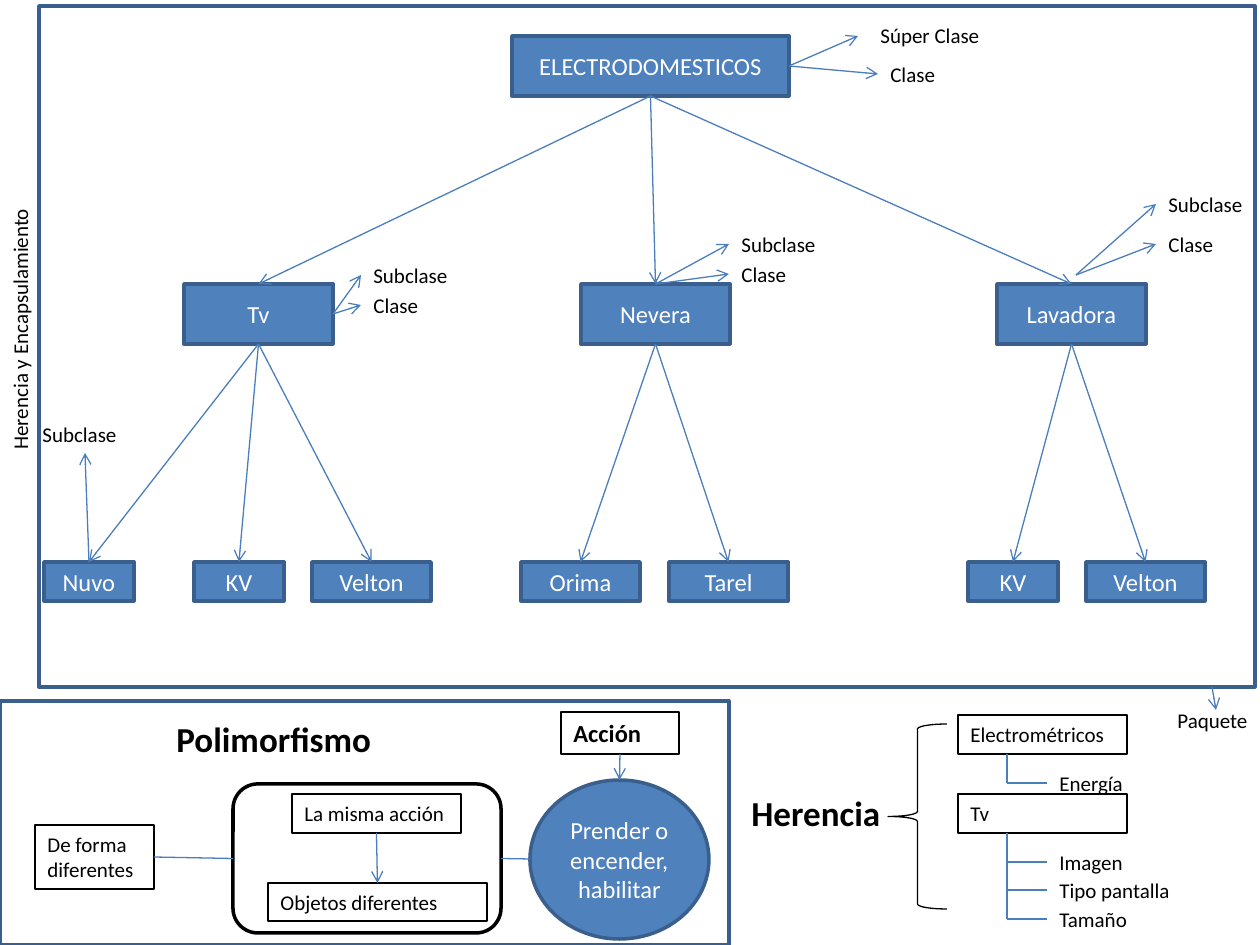
from lxml import etree
from pptx import Presentation
from pptx import util as u
from pptx.dml.color import RGBColor
from pptx.enum import shapes, text
from pptx.oxml import ns

PX = 914400 / 126
TOP, LEFT, BOTTOM, RIGHT = range(4)
KIND = shapes.MSO_SHAPE


def emu(px):
    return u.Emu(round(px * PX))


def color(value):
    return RGBColor.from_string(value)


class Sketch:
    font = "Calibri"
    ink, paper = "000000", "FFFFFF"
    blue, edge, wire = "4F81BD", "3A5F8C", "4B7EBC"

    def __init__(self, page):
        self.page = page

    def letter(self, shape, words, size, ink, bold=False, centred=False):
        frame = shape.text_frame
        frame.word_wrap = True
        frame.vertical_anchor = text.MSO_ANCHOR.MIDDLE if centred else text.MSO_ANCHOR.TOP
        para = frame.paragraphs[0]
        para.alignment = text.PP_ALIGN.CENTER if centred else text.PP_ALIGN.LEFT
        span = para.add_run()
        span.text = words
        span.font.name = self.font
        span.font.size = u.Pt(size)
        span.font.bold = bold
        span.font.color.rgb = color(ink)

    def shape(self, kind, at, fill, line, weight):
        shape = self.page.shapes.add_shape(kind, *map(emu, at))
        shape.shadow.inherit = False
        if fill:
            shape.fill.solid()
            shape.fill.fore_color.rgb = color(fill)
        else:
            shape.fill.background()
        shape.line.color.rgb = color(line)
        shape.line.width = u.Pt(weight)
        return shape

    def panel(self, kind, at, line):
        return self.shape(kind, at, self.paper, line, 2)

    def node(self, words, at, kind=KIND.RECTANGLE):
        box = self.shape(kind, at, self.blue, self.edge, 2)
        self.letter(box, words, 14, self.paper, centred=True)
        return box

    def card(self, words, at, size=12, bold=False, line=ink):
        box = self.shape(KIND.RECTANGLE, at, None, line, 0.75)
        self.letter(box, words, size, self.ink, bold)
        return box

    def heading(self, words, at):
        return self.card(words, at, 20, True, self.paper)

    def label(self, words, x, y, width=110, height=38):
        box = self.page.shapes.add_textbox(*map(emu, (x, y, width, height)))
        self.letter(box, words, 12, self.ink)
        return box

    def link(self, start, end, arrow=True):
        places = [p if isinstance(p[0], int) else (0, 0) for p in (start, end)]
        line = self.page.shapes.add_connector(
            shapes.MSO_CONNECTOR.STRAIGHT, *map(emu, places[0] + places[1]))
        for joint, connect in ((start, line.begin_connect), (end, line.end_connect)):
            if not isinstance(joint[0], int):
                connect(*joint)
        line.line.color.rgb = color(self.wire)
        line.line.width = u.Pt(0.75)
        properties = line._element.spPr
        if arrow:
            etree.SubElement(properties.get_or_add_ln(), ns.qn("a:tailEnd"), type="arrow")
        etree.SubElement(properties, ns.qn("a:effectLst"))


def draw_hierarchy(sketch):
    package = (39, 6, 1216, 681)
    sketch.panel(KIND.RECTANGLE, package, sketch.edge)
    root = sketch.node("ELECTRODOMESTICOS", (512, 36, 277, 60))
    sketch.label("Súper Clase", 868, 16, 168)
    sketch.link((root, RIGHT), (858, 36))
    sketch.link((root, RIGHT), (sketch.label("Clase", 878, 55, 90), LEFT))

    families = [
        ("Tv", 184, [("Nuvo", 44, 90), ("KV", 194, 90), ("Velton", 312, 119)]),
        ("Nevera", 581, [("Orima", 521, 119), ("Tarel", 669, 119)]),
        ("Lavadora", 997, [("KV", 968, 90), ("Velton", 1086, 119)]),
    ]
    parents, leaves = [], []
    for name, x, brands in families:
        parent = sketch.node(name, (x, 284, 149, 60))
        parents.append(parent)
        sketch.link((root, BOTTOM), (parent, TOP))
        for brand, left, width in brands:
            leaf = sketch.node(brand, (left, 562, width, 39))
            leaves.append(leaf)
            sketch.link((parent, BOTTOM), (leaf, TOP))

    tv, fridge, _ = parents
    notes = [
        ((tv, RIGHT), 361, 256, 286),
        ((fridge, TOP), 729, 225, 255),
        ((1076, 275), 1156, 185, 225),
    ]
    for start, x, upper, lower in notes:
        for words, y in (("Subclase", upper), ("Clase", lower)):
            sketch.link(start, (sketch.label(words, x, y), LEFT))

    sketch.link((leaves[0], TOP), (sketch.label("Subclase", 30, 415), BOTTOM))
    sketch.label("Paquete", 1165, 701, 119)
    sketch.link((1212, 687), (1216, 710))
    side = sketch.label("Herencia y Encapsulamiento", -118, 304, 277, 39)
    side.rotation = 270


def draw_polymorphism(sketch):
    sketch.panel(KIND.RECTANGLE, (0, 701, 729, 244), sketch.edge)
    group = sketch.panel(KIND.ROUNDED_RECTANGLE, (233, 784, 268, 149), sketch.ink)
    sketch.heading("Polimorfismo", (164, 711, 238, 55))
    circle = sketch.node("Prender o encender, habilitar", (530, 780, 179, 159), KIND.OVAL)
    action = sketch.card("Acción", (561, 712, 118, 42), 14, True)
    same = sketch.card("La misma acción", (292, 794, 169, 39))
    objects = sketch.card("Objetos diferentes", (268, 883, 219, 38))
    ways = sketch.card("De forma diferentes", (35, 825, 119, 64))
    sketch.link((action, BOTTOM), (circle, TOP))
    sketch.link((same, BOTTOM), (objects, TOP))
    sketch.link((group, LEFT), (ways, RIGHT), arrow=False)
    sketch.link((group, RIGHT), (530, 859), arrow=False)


def draw_inheritance(sketch):
    sketch.heading("Herencia", (739, 785, 160, 55))
    sketch.shape(KIND.LEFT_BRACE, (888, 724, 59, 185), None, sketch.ink, 0.75)
    trunk = 1007
    groups = [
        ("Electrométricos", 715, [("Energía", 764)]),
        ("Tv", 794, [("Imagen", 843), ("Tipo pantalla", 871), ("Tamaño", 900)]),
    ]
    for name, y, traits in groups:
        sketch.card(name, (958, y, 169, 39))
        for trait, top in traits:
            label = sketch.label(trait, 1047, top, 189)
            sketch.link((label, LEFT), (trunk, top + 19), arrow=False)
        sketch.link((trunk, traits[-1][1] + 19), (trunk, y + 39), arrow=False)


def main():
    deck = Presentation()
    deck.slide_width, deck.slide_height = emu(1260), emu(945)
    sketch = Sketch(deck.slides.add_slide(deck.slide_layouts[6]))
    for draw in (draw_polymorphism, draw_hierarchy, draw_inheritance):
        draw(sketch)
    deck.save("out.pptx")


if __name__ == "__main__":
    main()
